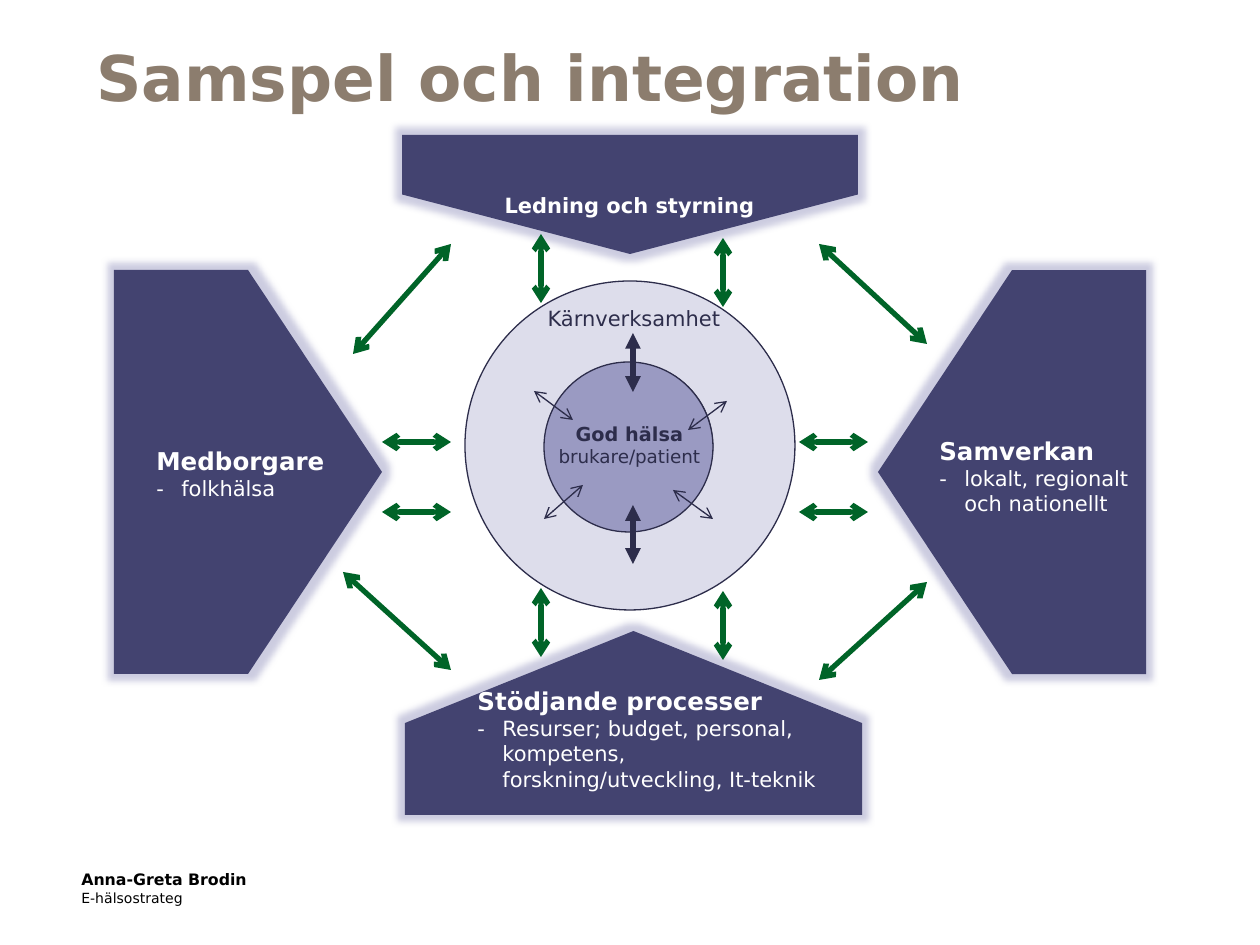
"""Build the slide on how care, citizens, steering and support interact."""
from dataclasses import dataclass
from itertools import product

from lxml import etree
from pptx import Presentation
from pptx.dml.color import RGBColor
from pptx.enum.shapes import MSO_CONNECTOR, MSO_SHAPE
from pptx.enum.text import MSO_ANCHOR, PP_ALIGN
from pptx.oxml.ns import qn
from pptx.util import Inches, Pt

STRAIGHT = MSO_CONNECTOR.STRAIGHT
PENTAGON, DONUT, OVAL = MSO_SHAPE.PENTAGON, MSO_SHAPE.DONUT, MSO_SHAPE.OVAL
TOP, MIDDLE = MSO_ANCHOR.TOP, MSO_ANCHOR.MIDDLE
LEFT, CENTER = PP_ALIGN.LEFT, PP_ALIGN.CENTER

WHITE = RGBColor(0xFF, 0xFF, 0xFF)
BLACK = RGBColor(0x00, 0x00, 0x00)
NAVY = RGBColor(0x43, 0x43, 0x70)
INK = RGBColor(0x2D, 0x2D, 0x4B)
PALE = RGBColor(0xDD, 0xDD, 0xEB)
LILAC = RGBColor(0x9A, 0x9A, 0xC2)
GREEN = RGBColor(0x00, 0x64, 0x28)
TAUPE = RGBColor(0x8C, 0x7D, 0x6E)

FONT = "DejaVu Sans"
PX_PER_INCH = 126
GLOW_RADIUS = Pt(8)
HANGING = 25


@dataclass(frozen=True)
class Box:
    x: int
    y: int
    w: int
    h: int


@dataclass(frozen=True)
class Line:
    text: str
    size: float
    bold: bool = False
    hanging: bool = False


@dataclass(frozen=True)
class Label:
    box: Box
    lines: tuple[Line, ...]
    color: RGBColor
    align: PP_ALIGN = LEFT
    anchor: MSO_ANCHOR = TOP


@dataclass(frozen=True)
class ArrowStyle:
    color: RGBColor
    width: float
    head: str


OUTER = ArrowStyle(GREEN, 3, "arrow")
INNER_THIN = ArrowStyle(INK, 0.75, "arrow")
INNER_THICK = ArrowStyle(INK, 3, "triangle")

PENTAGONS = (
    (Box(878, 270, 268, 404), 180),
    (Box(405, 631, 457, 184), 270),
    (Box(402, 135, 456, 119), 90),
    (Box(114, 270, 268, 404), 0),
)

LABELS = (
    Label(Box(84, 26, 1071, 100), (Line("Samspel och integration", 36, True),), TAUPE, anchor=MIDDLE),
    Label(Box(451, 186, 357, 38), (Line("Ledning och styrning", 12, True),), WHITE, CENTER),
    Label(Box(144, 440, 228, 68),
          (Line("Medborgare", 14, True), Line("-\tfolkhälsa", 12, hanging=True)), WHITE),
    Label(Box(927, 430, 238, 93),
          (Line("Samverkan", 14, True),
           Line("-\tlokalt, regionalt\noch nationellt", 12, hanging=True)), WHITE),
    Label(Box(465, 680, 397, 144),
          (Line("Stödjande processer", 14, True),
           Line("-\tResurser; budget, personal, kompetens, forskning/utveckling, It-teknik",
                12, hanging=True)), WHITE),
    Label(Box(520, 299, 228, 38), (Line("Kärnverksamhet", 12),), INK, CENTER),
    Label(Box(535, 416, 189, 60),
          (Line("God hälsa", 11, True), Line("brukare/patient", 10.5)), INK, CENTER),
    Label(Box(69, 864, 683, 49),
          (Line("Anna-Greta Brodin", 9, True), Line("E-hälsostrateg", 8)), BLACK),
)

HORIZONTALS = tuple((x, y, x + 69, y) for x, y in product((382, 799), (442, 512)))
VERTICALS = tuple((x, y, x, y + 69) for x, y in ((541, 234), (541, 588), (723, 238), (723, 591)))
DIAGONALS = ((819, 244, 927, 344), (819, 680, 927, 582),
             (353, 354, 451, 244), (343, 572, 451, 670))
ARROWS = (
    (OUTER, HORIZONTALS + VERTICALS + DIAGONALS),
    (INNER_THIN, ((534, 391, 573, 420), (544, 519, 583, 485),
                  (673, 490, 713, 519), (688, 430, 727, 401))),
    (INNER_THICK, ((633, 333, 633, 392), (633, 505, 633, 564))),
)


def px(n: float) -> int:
    """Turn px into EMU."""
    return round(n * Inches(1) / PX_PER_INCH)


def add_shape(slide, kind, box: Box, fill: RGBColor):
    """Add a filled shape without shadow or outline."""
    s = slide.shapes.add_shape(kind, px(box.x), px(box.y), px(box.w), px(box.h))
    s.shadow.inherit = False
    s.fill.solid()
    s.fill.fore_color.rgb = fill
    s.line.fill.background()
    return s


def add_pentagon(slide, box: Box, rotation: int) -> None:
    """Add a glowing pentagon that fills the box once rotated."""
    s = add_shape(slide, PENTAGON, box, NAVY)
    if rotation % 180:
        s.left, s.top = px(box.x + (box.w - box.h) / 2), px(box.y + (box.h - box.w) / 2)
        s.width, s.height = px(box.h), px(box.w)
    s.rotation = rotation
    effects = s._element.spPr.find(qn("a:effectLst"))
    glow = etree.SubElement(effects, qn("a:glow"), rad=str(GLOW_RADIUS))
    color = etree.SubElement(glow, qn("a:srgbClr"), val=str(LILAC))
    etree.SubElement(color, qn("a:alpha"), val="50000")


def add_ring(slide, kind, box: Box, fill: RGBColor):
    """Add an outlined circle or ring."""
    s = add_shape(slide, kind, box, fill)
    s.line.color.rgb = INK
    s.line.width = Pt(0.75)
    return s


def add_arrow(slide, style: ArrowStyle, ends: tuple[int, int, int, int]) -> None:
    """Add a double-headed arrow."""
    s = slide.shapes.add_connector(STRAIGHT, *map(px, ends))
    s.line.color.rgb = style.color
    s.line.width = Pt(style.width)
    ln = s.line._get_or_add_ln()
    for tag in ("a:headEnd", "a:tailEnd"):
        etree.SubElement(ln, qn(tag), type=style.head)
    etree.SubElement(s._element.spPr, qn("a:effectLst"))


def add_label(slide, label: Label) -> None:
    """Add a text box with one paragraph per line."""
    box = label.box
    tf = slide.shapes.add_textbox(px(box.x), px(box.y), px(box.w), px(box.h)).text_frame
    tf.word_wrap = True
    tf.vertical_anchor = label.anchor
    for i, line in enumerate(label.lines):
        p = tf.add_paragraph() if i else tf.paragraphs[0]
        p.alignment = label.align
        if line.hanging:
            p._p.get_or_add_pPr().set("marL", str(px(HANGING)))
            p._p.get_or_add_pPr().set("indent", str(-px(HANGING)))
        for j, part in enumerate(line.text.split("\n")):
            if j:
                p.add_line_break()
            r = p.add_run()
            r.text = part
            r.font.name = FONT
            r.font.size = Pt(line.size)
            r.font.bold = line.bold
            r.font.color.rgb = label.color


def main() -> None:
    """Draw the slide and save it."""
    prs = Presentation()
    prs.slide_width, prs.slide_height = Inches(10), Inches(7.5)
    slide = prs.slides.add_slide(prs.slide_layouts[6])
    for box, rotation in PENTAGONS:
        add_pentagon(slide, box, rotation)
    add_ring(slide, DONUT, Box(465, 281, 330, 329), PALE).adjustments[0] = 0.25
    add_ring(slide, OVAL, Box(544, 362, 169, 170), LILAC)
    for style, arrows in ARROWS:
        for ends in arrows:
            add_arrow(slide, style, ends)
    for label in LABELS:
        add_label(slide, label)
    prs.save("out.pptx")


if __name__ == "__main__":
    main()
